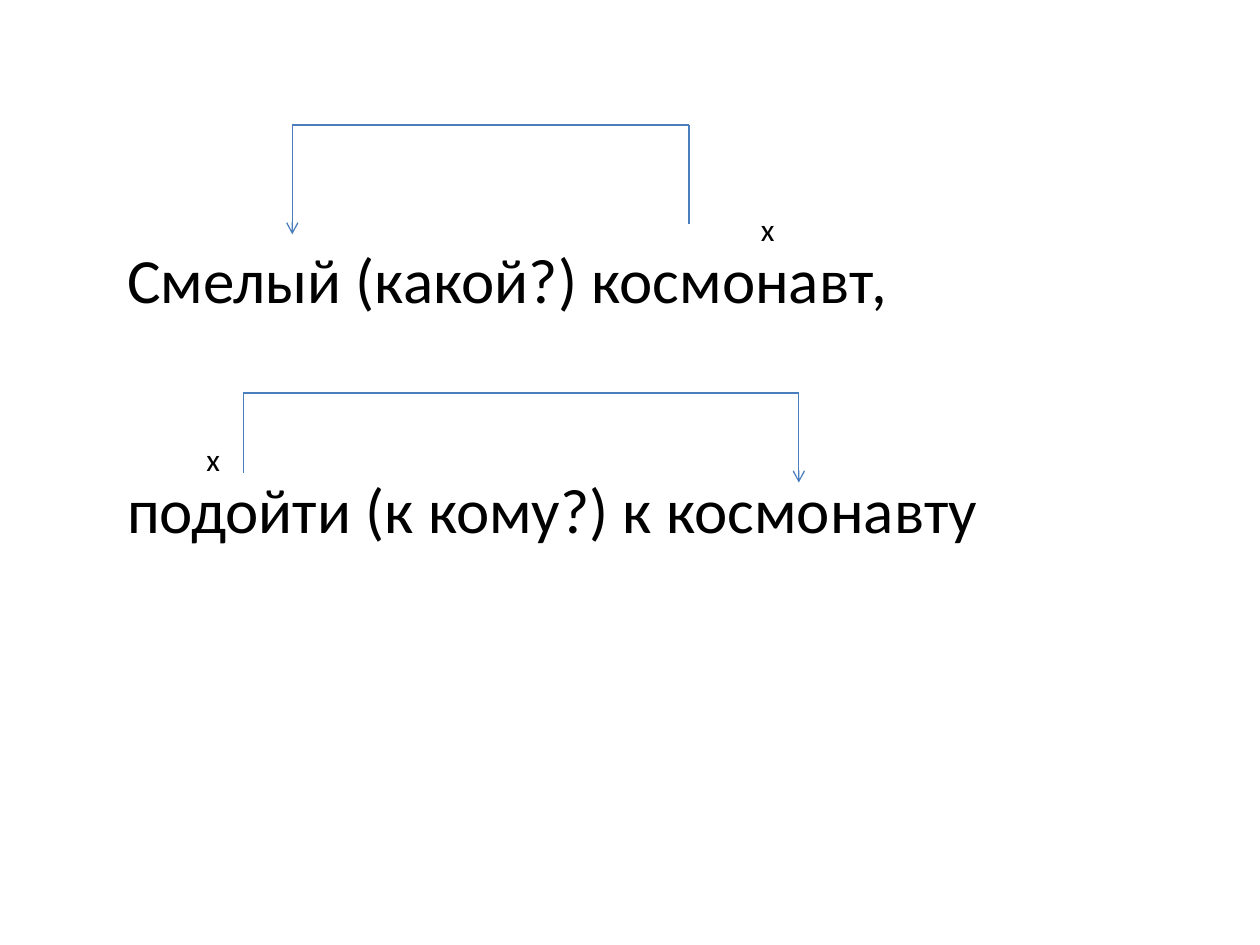
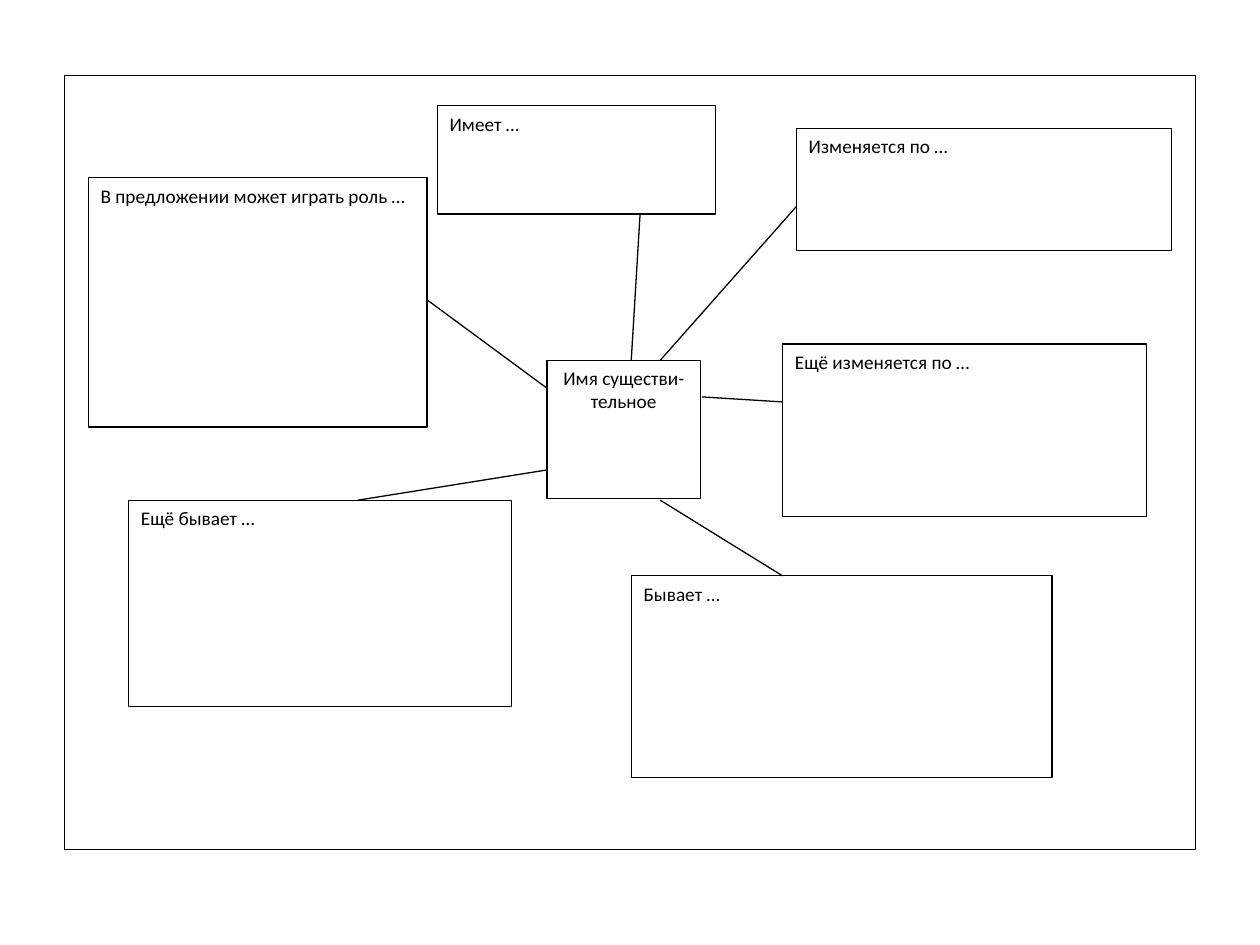
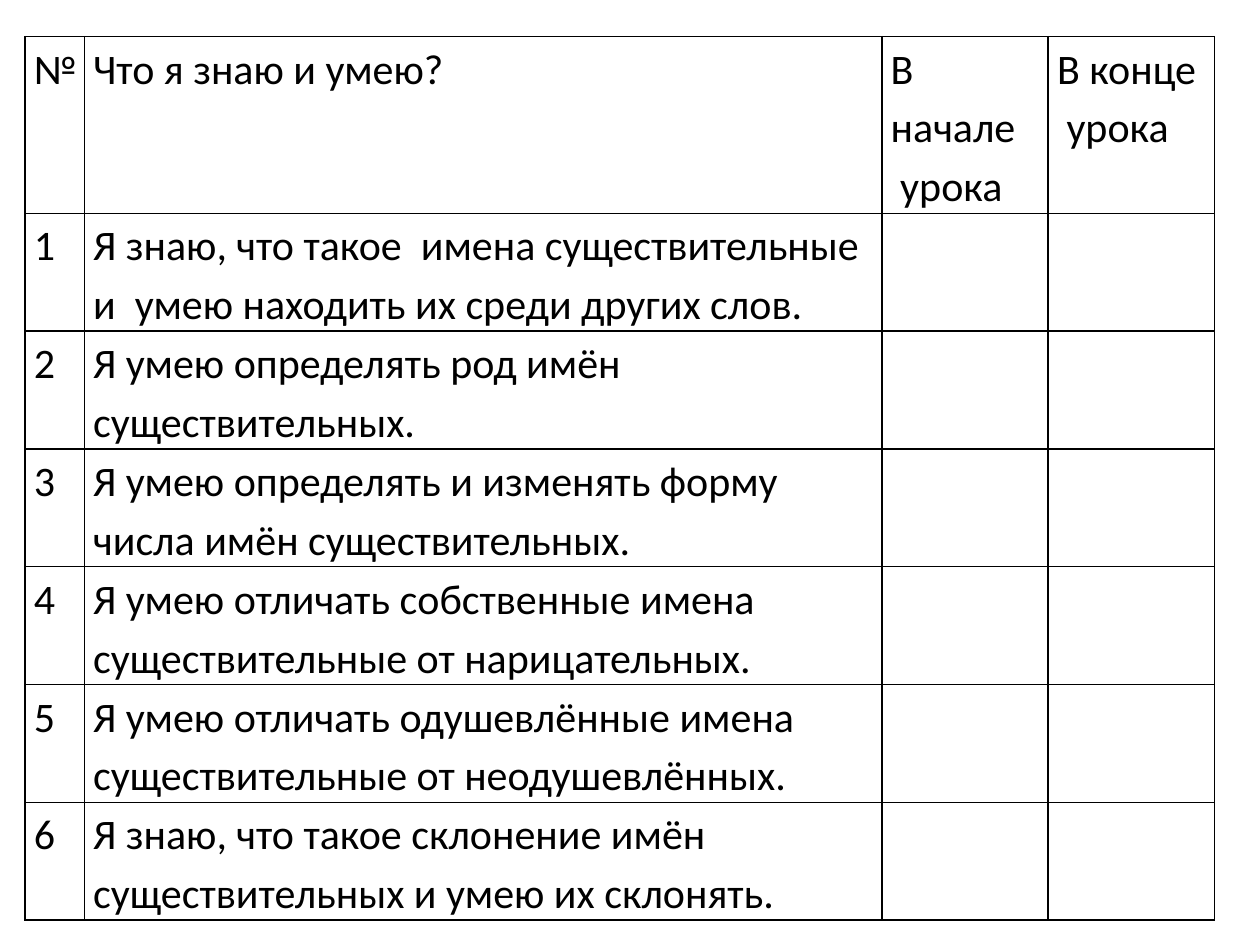
from lxml.etree import SubElement
from pptx import Presentation
from pptx.dml.color import RGBColor
from pptx.enum.shapes import MSO_CONNECTOR, MSO_SHAPE
from pptx.enum.text import MSO_ANCHOR, PP_ALIGN
from pptx.oxml.ns import qn
from pptx.util import Inches, Pt

COLORS = {"ink": "000000", "paper": "FFFFFF", "bracket": "4B7EBC"}
FONT = "Calibri"
SLIDE_WIDTH, SLIDE_HEIGHT = 10, 7.5
BLANK_LAYOUT = 6

PHRASES = ["Смелый (какой?) космонавт,", "подойти (к кому?) к космонавту"]
PHRASE_BOX = (0.91, 1.86, 7.48, 2.52)
MAIN_WORD_MARKS = [(5.94, 1.62), (1.54, 3.44)]
BRACKETS = [
    {"top": 0.99, "start": (5.47, 1.78), "end": (2.32, 1.86), "width": 1},
    {"top": 3.12, "start": (1.93, 3.75), "end": (6.34, 3.83), "width": 0.75},
]

MAP_FRAME = (0.51, 0.6, 8.98, 6.14)
MAP_CENTRE = ("Имя существи-тельное", (4.34, 2.86, 1.22, 1.1))
MAP_BRANCHES = [
    ("Имеет …", (3.47, 0.84, 2.21, 0.86), (5.08, 1.7), (5.01, 2.86)),
    ("Изменяется по …", (6.32, 1.02, 2.98, 0.97), (6.32, 1.64), (5.24, 2.86)),
    ("Ещё изменяется по …", (6.21, 2.73, 2.89, 1.37), (6.21, 3.19), (5.57, 3.15)),
    ("Бывает …", (5.01, 4.57, 3.34, 1.6), (6.21, 4.57), (5.24, 3.97)),
    ("Ещё бывает …", (1.02, 3.97, 3.04, 1.64), (2.84, 3.97), (4.34, 3.73)),
    ("В предложении может играть роль …", (0.7, 1.41, 2.69, 1.98), (3.39, 2.38), (4.34, 3.08)),
]

CHECKLIST_HEADER = ["№", "Что я знаю и умею?", "В начале\n урока", "В конце\n урока"]
SKILLS = [
    "Я знаю, что такое  имена существительные\nи  умею находить их среди других слов.",
    "Я умею определять род имён существительных.",
    "Я умею определять и изменять форму\nчисла имён существительных.",
    "Я умею отличать собственные имена существительные от нарицательных.",
    "Я умею отличать одушевлённые имена существительные от неодушевлённых.",
    "Я знаю, что такое склонение имён существительных и умею их склонять.",
]
CHECKLIST_CORNER = (0.2, 0.29)
COLUMN_WIDTHS = [0.47, 6.33, 1.32, 1.32]
HEADER_HEIGHT, SKILL_HEIGHT = 1.4, 0.93


def color(name):
    return RGBColor.from_string(COLORS[name])


def inches(lengths):
    return [Inches(length) for length in lengths]


def write(frame, lines, size, align=PP_ALIGN.LEFT, gap=0, after=0, spacing=None):
    frame.word_wrap = True
    for index, line in enumerate(lines):
        paragraph = frame.add_paragraph() if index else frame.paragraphs[0]
        paragraph.alignment = align
        paragraph.space_before = Pt(gap if index else 0)
        paragraph.space_after = Pt(after)
        paragraph.line_spacing = spacing
        run = paragraph.add_run()
        run.text = line
        run.font.size = Pt(size)
        run.font.name = FONT
        run.font.color.rgb = color("ink")


def add_text(slide, box, lines, size, **options):
    write(slide.shapes.add_textbox(*inches(box)).text_frame, lines, size, **options)


def add_box(slide, box, text=None, **options):
    shape = slide.shapes.add_shape(MSO_SHAPE.RECTANGLE, *inches(box))
    shape.shadow.inherit = False
    shape.fill.solid()
    shape.fill.fore_color.rgb = color("paper")
    shape.line.color.rgb = color("ink")
    shape.line.width = Pt(0.75)
    if text:
        shape.text_frame.vertical_anchor = MSO_ANCHOR.TOP
        write(shape.text_frame, [text], 11, after=10, **options)


def add_line(slide, start, end, color_name="ink", width=0.75, arrow=False):
    connector = slide.shapes.add_connector(MSO_CONNECTOR.STRAIGHT, *inches(start + end))
    connector.line.color.rgb = color(color_name)
    connector.line.width = Pt(width)
    if arrow:
        SubElement(connector.line._get_or_add_ln(), qn("a:tailEnd"), type="arrow")
    SubElement(connector._element.spPr, qn("a:effectLst"))


def add_bracket(slide, top, start, end, width):
    corners = [start, (start[0], top), (end[0], top), end]
    for index, (begin, finish) in enumerate(zip(corners, corners[1:])):
        last = index == 2
        add_line(slide, begin, finish, "bracket", 0.75 if last else width, arrow=last)


def format_cell(cell, text):
    cell.margin_left = cell.margin_right = Inches(0.07)
    cell.margin_top = cell.margin_bottom = 0
    properties = cell._tc.get_or_add_tcPr()
    for side in ("lnL", "lnR", "lnT", "lnB"):
        border = SubElement(properties, qn(f"a:{side}"), w=str(Pt(1)))
        fill = SubElement(border, qn("a:solidFill"))
        SubElement(fill, qn("a:srgbClr"), val=COLORS["ink"])
    cell.fill.solid()
    cell.fill.fore_color.rgb = color("paper")
    if text:
        write(cell.text_frame, text.split("\n"), 24, spacing=1.15)


def build_phrases(slide):
    add_text(slide, PHRASE_BOX, PHRASES, 36, gap=88)
    for left, top in MAIN_WORD_MARKS:
        add_text(slide, (left, top, 0.31, 0.4), ["х"], 18)
    for bracket in BRACKETS:
        add_bracket(slide, **bracket)


def build_noun_map(slide):
    add_box(slide, MAP_FRAME)
    text, box = MAP_CENTRE
    add_box(slide, box, text, align=PP_ALIGN.CENTER)
    for text, box, start, end in MAP_BRANCHES:
        add_box(slide, box, text)
        add_line(slide, start, end)


def build_checklist(slide):
    rows = [CHECKLIST_HEADER]
    rows += [[str(number), skill, "", ""] for number, skill in enumerate(SKILLS, 1)]
    heights = [HEADER_HEIGHT] + [SKILL_HEIGHT] * len(SKILLS)
    size = (sum(COLUMN_WIDTHS), sum(heights))
    table = slide.shapes.add_table(
        len(rows), len(COLUMN_WIDTHS), *inches(CHECKLIST_CORNER + size)
    ).table
    for column, width in zip(table.columns, COLUMN_WIDTHS):
        column.width = Inches(width)
    for row, height, texts in zip(table.rows, heights, rows):
        row.height = Inches(height)
        for cell, text in zip(row.cells, texts):
            format_cell(cell, text)


def main():
    presentation = Presentation()
    presentation.slide_width = Inches(SLIDE_WIDTH)
    presentation.slide_height = Inches(SLIDE_HEIGHT)
    for build in (build_phrases, build_noun_map, build_checklist):
        build(presentation.slides.add_slide(presentation.slide_layouts[BLANK_LAYOUT]))
    presentation.save("out.pptx")


if __name__ == "__main__":
    main()
